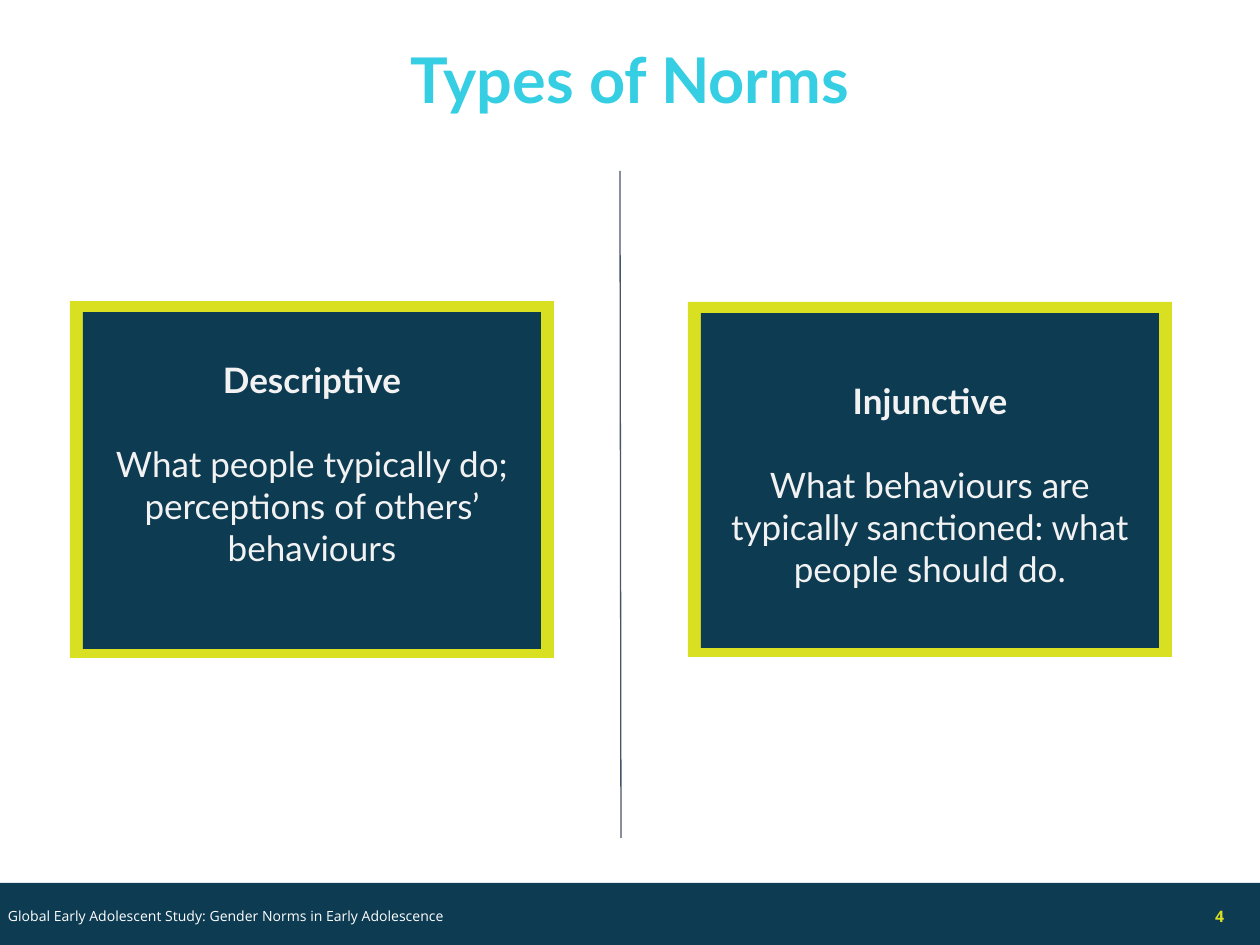
from pptx import Presentation
from pptx.dml.color import RGBColor
from pptx.enum.shapes import MSO_CONNECTOR, MSO_SHAPE
from pptx.enum.text import MSO_ANCHOR, MSO_AUTO_SIZE, PP_ALIGN
from pptx.util import Emu, Pt
from lxml.etree import SubElement
from pptx.oxml.ns import qn

NAVY = RGBColor(0x0D, 0x3B, 0x52)
LIME = RGBColor(0xD9, 0xE0, 0x21)
CYAN = RGBColor(0x35, 0xCE, 0xE2)
PALE = RGBColor(0xF2, 0xF2, 0xF2)
WHITE = RGBColor(0xFF, 0xFF, 0xFF)
SLATE = RGBColor(0x44, 0x54, 0x6A)

# Content: cards are (frame box, bottom inset, heading, body)
TITLE = "Types of Norms"
CARDS = [
    ((70, 301, 484, 357), 53, "Descriptive",
     "What people typically do; perceptions of others\u2019 behaviours"),
    ((688, 302, 484, 355), 11, "Injunctive",
     "What behaviours are typically sanctioned: what people should do."),
]
FOOTER = "Global Early Adolescent Study: Gender Norms in Early Adolescence"
PAGE = "4"

TITLE_FONT = dict(name="Lato", size=Pt(36), bold=True)
HEAD_FONT = dict(name="Lato", size=Pt(20), bold=True)
BODY_FONT = dict(HEAD_FONT, bold=False)
FOOTER_FONT = dict(name="Open Sans", size=Pt(8), bold=False)
PAGE_FONT = dict(name="Open Sans", size=Pt(9), bold=True)


def px(n):
    return Emu(round(n * 914400 / 126))


def rect(box, color):
    sp = s.shapes.add_shape(MSO_SHAPE.RECTANGLE, *map(px, box))
    sp.shadow.inherit = False
    sp.fill.solid()
    sp.fill.fore_color.rgb = color
    sp.line.fill.background()
    return sp


def write(sp, lines, color, align, insets):
    """Fill a shape with paragraphs given as (text, font, space before)."""
    tf = sp.text_frame
    frame = dict(word_wrap=True, auto_size=MSO_AUTO_SIZE.NONE,
                 vertical_anchor=MSO_ANCHOR.MIDDLE)
    sides = ("margin_left", "margin_top", "margin_right", "margin_bottom")
    frame.update(zip(sides, map(px, insets)))
    for key, value in frame.items():
        setattr(tf, key, value)
    for i, (text, font, before) in enumerate(lines):
        p = tf.add_paragraph() if i else tf.paragraphs[0]
        p.alignment = align
        p.space_before = Pt(before)
        r = p.add_run()
        r.text = text
        for key, value in font.items():
            setattr(r.font, key, value)
        r.font.color.rgb = color
    return tf


def textbox(box, *args):
    write(s.shapes.add_textbox(*map(px, box)), *args)


prs = Presentation()
prs.slide_width, prs.slide_height = px(1260), px(945)
s = prs.slides.add_slide(prs.slide_layouts[5])

# Footer band and page number
rect((0, 883, 1260, 62), NAVY)
textbox((1154, 891, 83, 50), [(PAGE, PAGE_FONT, 0)], LIME,
        PP_ALIGN.RIGHT, (13, 6, 13, 6))

# Title
title = s.shapes.title
title.left, title.top, title.width, title.height = map(px, (27, 48, 1206, 96))
tf = write(title, [(TITLE, TITLE_FONT, 0)], CYAN, PP_ALIGN.CENTER, (0,) * 4)
tf.paragraphs[0].line_spacing = 0.35

# Framed cards
for (x, y, w, h), bottom, heading, body in CARDS:
    rect((x, y, w, h), LIME)
    panel = rect((x + 13, y + 11, w - 26, h - 20), NAVY)
    write(panel, [(heading, HEAD_FONT, 0), (body, BODY_FONT, 24)], PALE,
          PP_ALIGN.CENTER, (19, 19, 19, bottom))

# Divider
line = s.shapes.add_connector(MSO_CONNECTOR.STRAIGHT,
                              *map(px, (620, 171, 621, 838)))
line.line.color.rgb = SLATE
line.line.width = Pt(0.75)
SubElement(line._element.spPr, qn("a:effectLst"))

# Footer text
textbox((-5, 898, 741, 35), [(FOOTER, FOOTER_FONT, 0)], WHITE,
        PP_ALIGN.LEFT, (13,) * 4)

prs.save("out.pptx")
